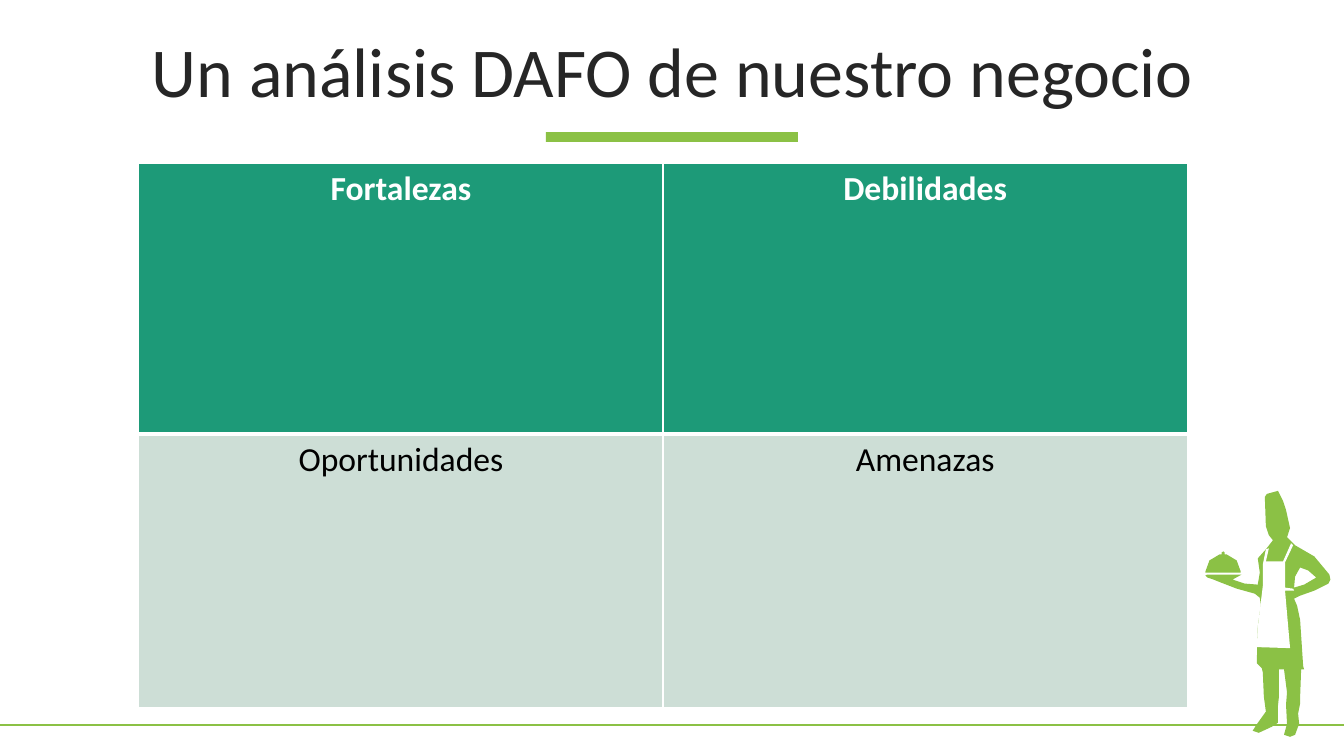
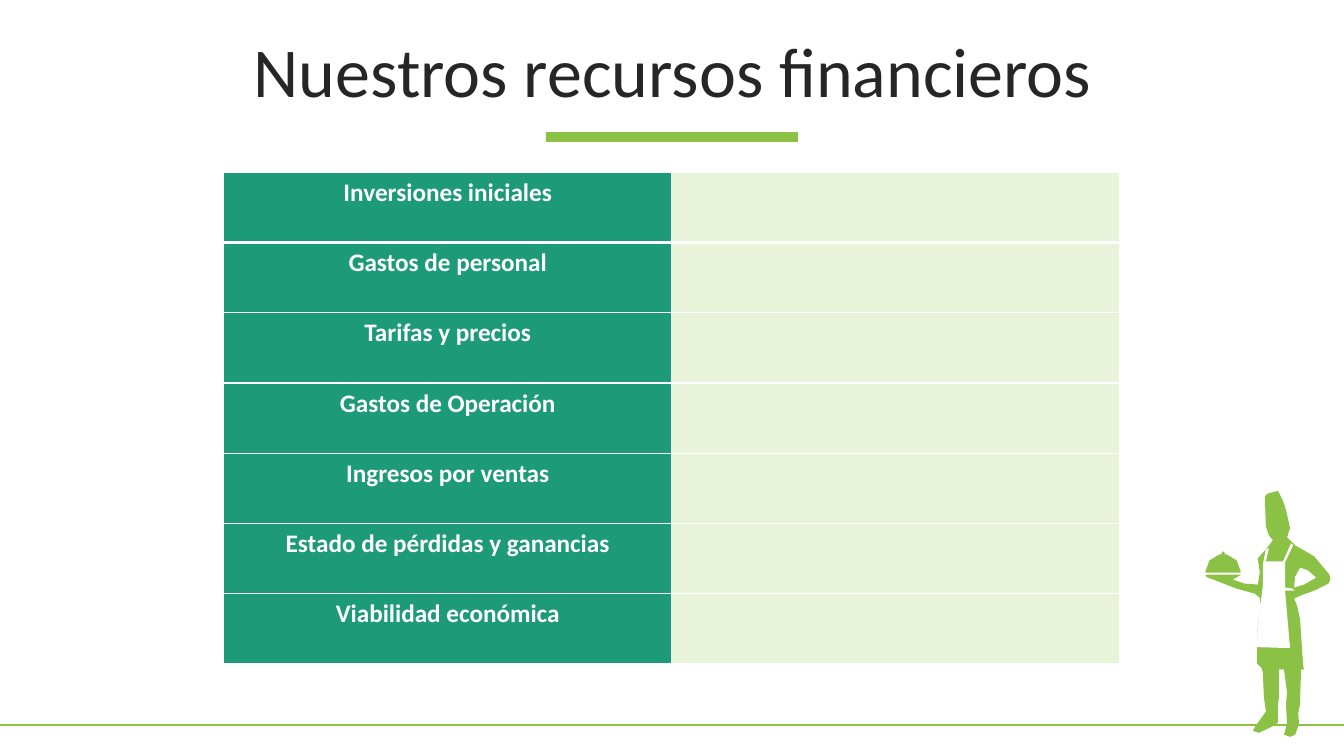
from pptx import Presentation
from pptx.dml.color import RGBColor
from pptx.enum.shapes import MSO_CONNECTOR, MSO_SHAPE
from pptx.enum.text import MSO_ANCHOR, MSO_AUTO_SIZE, PP_ALIGN
from pptx.oxml.ns import qn
from pptx.util import Cm, Pt
from lxml.etree import SubElement

LIME = RGBColor(0x8B, 0xC1, 0x45)
TEAL = RGBColor(0x1D, 0x9A, 0x78)
SAGE = RGBColor(0xCD, 0xDE, 0xD6)
PALE = RGBColor(0xE8, 0xF3, 0xDA)
INK = RGBColor(0x26, 0x26, 0x26)
BLACK = RGBColor(0, 0, 0)
WHITE = RGBColor(0xFF, 0xFF, 0xFF)
FONT = "Calibri"

# Chef outlines, in hundredths of an inch
BODY = [
    (1198, 570), (1232, 570), (1223, 575), (1235, 579), (1248, 580),
    (1250, 568), (1248.5, 554), (1256, 545), (1263, 536), (1259, 531),
    (1256, 522), (1255, 493), (1257, 490), (1268.5, 487), (1273, 497),
    (1276, 506), (1280, 524), (1277, 533), (1285, 541), (1304, 552.5),
    (1319, 570), (1320, 575), (1318, 579), (1303.5, 585.5), (1290, 591),
    (1284.5, 594), (1287, 601), (1290, 615), (1293, 661), (1294, 664),
    (1291, 664), (1290, 692), (1290, 698), (1288, 708), (1289, 718),
    (1285, 729), (1280, 731), (1274, 729), (1277, 718), (1276, 699),
    (1277, 687), (1274, 664), (1269, 664), (1269, 691), (1268, 700),
    (1268, 713), (1268, 717), (1262, 721), (1249, 727), (1243, 725),
    (1246, 720), (1255.5, 706.5), (1254, 691), (1253, 667), (1252, 663),
    (1247, 658), (1248, 622), (1251, 600), (1250, 593), (1245, 589),
    (1227, 583.5), (1209, 577), (1204, 575), (1198, 573), (1196, 571),
]
ELBOW = [
    (1284, 583), (1294, 580), (1306, 573), (1298, 565.5), (1290, 563),
    (1285, 572),
]
APRON = [
    (1281, 539), (1273, 557), (1256, 557), (1259, 544), (1256, 545),
    (1253, 560), (1253, 581), (1248, 622), (1247, 642), (1280, 643),
    (1275, 586), (1284, 586), (1283, 584), (1275, 583), (1275, 558),
    (1283, 541),
]
DISH = [
    (1214, 547), (1212, 548), (1212, 550), (1210, 550), (1200, 556),
    (1196, 567), (1196, 568), (1231, 568), (1231, 567), (1227, 556),
    (1217, 550), (1215, 550), (1215, 548),
]


def dress(para, form, color):
    para.alignment = PP_ALIGN.CENTER
    font = para.runs[0].font
    for key, val in form.items():
        setattr(font, key, val)
    font.color.rgb = color


def edge(cell, widths):
    """Draw white borders; widths are points for left, right, top, bottom."""
    props = cell._tc.get_or_add_tcPr()
    for spot, (side, width) in enumerate(zip(("lnL", "lnR", "lnT", "lnB"), widths)):
        line = props.makeelement(qn("a:" + side), {"w": str(Pt(width))})
        fill = SubElement(line, qn("a:solidFill"))
        SubElement(fill, qn("a:srgbClr"), val=str(WHITE))
        props.insert(spot, line)


deck = Presentation()
deck.slide_width, deck.slide_height = Cm(33.87), Cm(19.05)

# Shared layout: title place, no footer fields
base = deck.slide_layouts[5]
for item in list(base.placeholders):
    if item.placeholder_format.idx:
        item.element.getparent().remove(item.element)
head = base.placeholders[0]
head.left, head.top, head.width, head.height = Cm(0.88), Cm(0.95), Cm(32.16), Cm(2)

# Shared art: drawn on the first slide, then moved to the layout
first = deck.slides.add_slide(base)
second = deck.slides.add_slide(base)
art = first.shapes
bar = art.add_shape(MSO_SHAPE.RECTANGLE, Cm(13.76), Cm(3.33), Cm(6.35), Cm(0.25))
rule = art.add_connector(MSO_CONNECTOR.STRAIGHT, 0, Cm(18.28), deck.slide_width, Cm(18.28))
rule.line.color.rgb = LIME
rule.line.width = Pt(1.5)
SubElement(rule.element.spPr, qn("a:effectLst"))

solids = [(bar, LIME)]
for loops, color in (((BODY, ELBOW), LIME), ((APRON,), WHITE), ((DISH,), LIME)):
    pen = art.build_freeform(*loops[0][0], scale=Cm(2.54) / 100)
    pen.add_line_segments(loops[0][1:])
    for hole in loops[1:]:
        pen.move_to(*hole[0])
        pen.add_line_segments(hole[1:])
    solids.append((pen.convert_to_shape(), color))

for shape, color in solids:
    shape.fill.solid()
    shape.fill.fore_color.rgb = color
    shape.line.fill.background()
    shape.shadow.inherit = False
for shape in [bar, rule] + [solid for solid, _ in solids[1:]]:
    base.shapes.element.append(shape.element)

# Slide contents: each cell is (text, fill, text colour, bold)
swot = [
    [(name, TEAL, WHITE, True) for name in ("Fortalezas", "Debilidades")],
    [(name, SAGE, BLACK, False) for name in ("Oportunidades", "Amenazas")],
]
funds = [
    [(name, TEAL, WHITE, True), ("", PALE, BLACK, False)]
    for name in (
        "Inversiones iniciales", "Gastos de personal", "Tarifas y precios",
        "Gastos de Operación", "Ingresos por ventas",
        "Estado de pérdidas y ganancias", "Viabilidad económica",
    )
]
pages = [
    (first, "Un análisis DAFO de nuestro negocio", swot, 24,
     (3.5, 4.11), 13.21, [6.83, 6.88]),
    (second, "Nuestros recursos financieros", funds, 18,
     (5.64, 4.34), 11.29, [1.77] * 7),
]

for slide, name, rows, size, (left, top), wide, highs in pages:
    # Title
    frame = slide.shapes.title.text_frame
    frame.text = name
    frame.auto_size = MSO_AUTO_SIZE.NONE
    frame.vertical_anchor = MSO_ANCHOR.MIDDLE
    para = frame.paragraphs[0]
    para.line_spacing = 0.8
    para.space_before = Pt(10)
    dress(para, {"name": FONT, "size": Pt(50)}, INK)

    # Table
    grid = slide.shapes.add_table(
        len(rows), 2, Cm(left), Cm(top), Cm(2 * wide), Cm(sum(highs))).table
    grid.first_row = grid.horz_banding = False
    for col in grid.columns:
        col.width = Cm(wide)
    for r, row in enumerate(rows):
        grid.rows[r].height = Cm(highs[r])
        for c, (text, fill, color, bold) in enumerate(row):
            cell = grid.cell(r, c)
            cell.fill.solid()
            cell.fill.fore_color.rgb = fill
            edge(cell, (1, 1, 3 if r == 1 else 1, 3 if r == 0 else 1))
            if text:
                cell.text = text
                form = {"name": FONT, "size": Pt(size), "bold": bold}
                dress(cell.text_frame.paragraphs[0], form, color)

deck.save("out.pptx")
